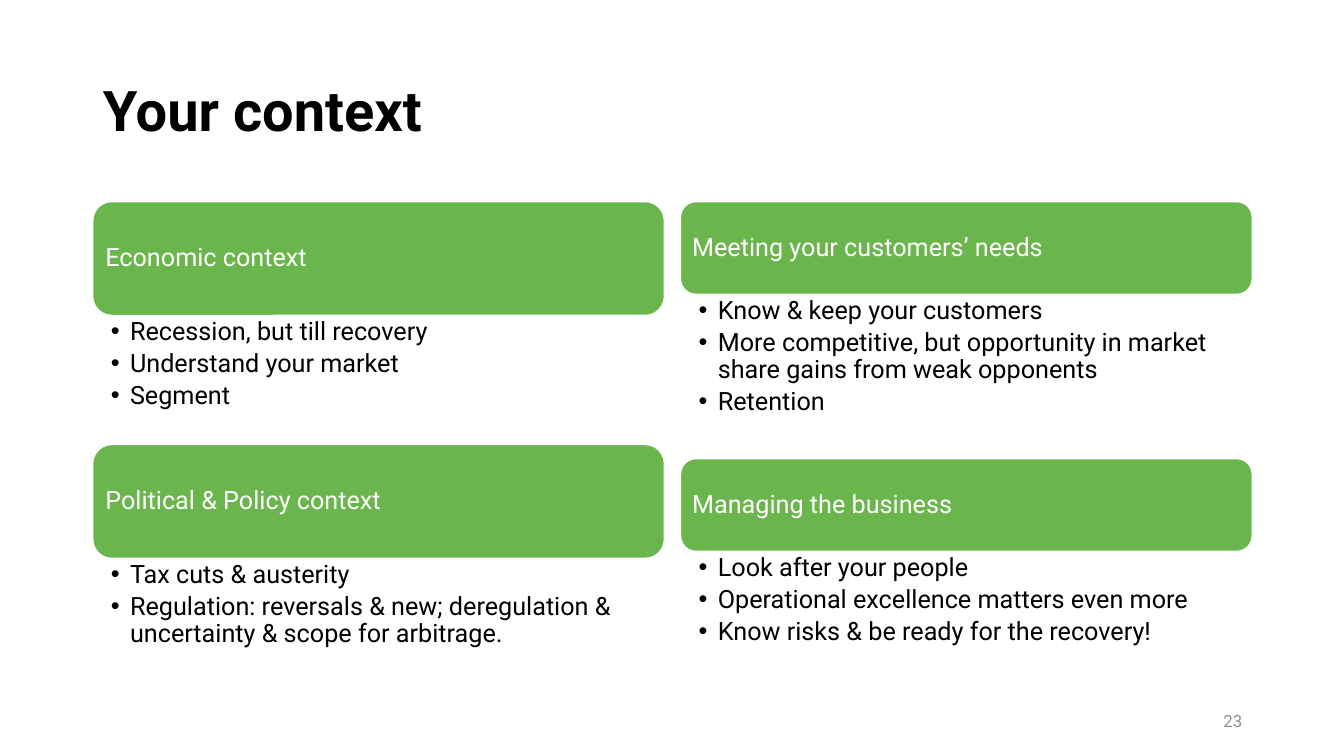
from dataclasses import dataclass

from lxml.etree import SubElement
from pptx import Presentation
from pptx.dml.color import RGBColor
from pptx.enum.shapes import MSO_SHAPE
from pptx.enum.text import MSO_ANCHOR, PP_ALIGN
from pptx.oxml.ns import qn
from pptx.util import Inches, Pt

FONT = "Roboto"
GREEN, WHITE, BLACK, GREY = "6AB64C", "FFFFFF", "000000", "8C8C8C"
CARD_WIDTH = 5.67
LEFT_COLUMN, RIGHT_COLUMN = 0.92, 6.75


@dataclass
class Card:
    left: float
    top: float
    header_height: float
    body_height: float
    heading: str
    points: list[str]


CARDS = [
    Card(LEFT_COLUMN, 2, 1.13, 1.28, "Economic context",
         ["Recession, but till recovery", "Understand your market", "Segment"]),
    Card(LEFT_COLUMN, 4.41, 1.13, 1.21, "Political & Policy context",
         ["Tax cuts & austerity",
          "Regulation: reversals & new; deregulation & uncertainty & scope for arbitrage."]),
    Card(RIGHT_COLUMN, 2, 0.92, 1.63, "Meeting your customers’ needs",
         ["Know & keep your customers",
          "More competitive, but opportunity in market share gains from weak opponents",
          "Retention"]),
    Card(RIGHT_COLUMN, 4.55, 0.92, 1.27, "Managing the business",
         ["Look after your people", "Operational excellence matters even more",
          "Know risks & be ready for the recovery!"]),
]


def rgb(value: str) -> RGBColor:
    return RGBColor.from_string(value)


def add_bullet(p) -> None:
    p.level = 1
    pPr = p._p.get_or_add_pPr()
    pPr.set("marL", str(Inches(0.19)))
    pPr.set("indent", str(-Inches(0.19)))
    SubElement(pPr, qn("a:buFont")).set("typeface", "Arial")
    SubElement(pPr, qn("a:buChar")).set("char", "•")


def write_text(sp, lines: list[str], *, size: float = 18, color: str = BLACK,
               bold: bool = False, align=PP_ALIGN.LEFT, anchor=MSO_ANCHOR.MIDDLE,
               insets=(0.1, 0.05, 0.1, 0.05), line_spacing: float = 0.9,
               space_after: float = 0, bullets: bool = False) -> None:
    tf = sp.text_frame
    tf.word_wrap = True
    tf.vertical_anchor = anchor
    tf.margin_left, tf.margin_top, tf.margin_right, tf.margin_bottom = map(Inches, insets)
    for i, line in enumerate(lines):
        p = tf.add_paragraph() if i else tf.paragraphs[0]
        if bullets:
            add_bullet(p)
        p.alignment = align
        p.line_spacing = line_spacing
        p.space_before = Pt(0)
        p.space_after = Pt(space_after)
        r = p.add_run()
        r.text = line
        r.font.name, r.font.size, r.font.bold = FONT, Pt(size), bold
        r.font.color.rgb = rgb(color)


def add_card(s, card: Card) -> None:
    # Green header
    header = s.shapes.add_shape(
        MSO_SHAPE.ROUNDED_RECTANGLE, Inches(card.left), Inches(card.top),
        Inches(CARD_WIDTH), Inches(card.header_height))
    header.shadow.inherit = False
    header.fill.solid()
    header.fill.fore_color.rgb = rgb(GREEN)
    header.line.color.rgb = rgb(WHITE)
    header.line.width = Pt(1)
    write_text(header, [card.heading], color=WHITE, insets=(0.07,) * 4)

    # Bulleted points below it
    body = s.shapes.add_textbox(
        Inches(card.left), Inches(card.top + card.header_height),
        Inches(CARD_WIDTH), Inches(card.body_height))
    write_text(body, card.points, anchor=MSO_ANCHOR.TOP, bullets=True,
               insets=(0.18, 0.03, 0.14, 0.03), space_after=3.6)


def main() -> None:
    prs = Presentation()
    prs.slide_width, prs.slide_height = Inches(13.33), Inches(7.5)
    s = prs.slides.add_slide(prs.slide_layouts[5])

    # Title
    title = s.shapes.title
    title.left, title.top = Inches(0.92), Inches(0.4)
    title.width, title.height = Inches(11.5), Inches(1.45)
    write_text(title, ["Your context"], size=40, bold=True)

    # Context cards
    for card in CARDS:
        add_card(s, card)

    # Slide number
    number = s.shapes.add_textbox(Inches(9.42), Inches(6.95), Inches(3), Inches(0.4))
    write_text(number, ["23"], size=12, color=GREY, align=PP_ALIGN.RIGHT, line_spacing=1.0)

    prs.save("out.pptx")


if __name__ == "__main__":
    main()
